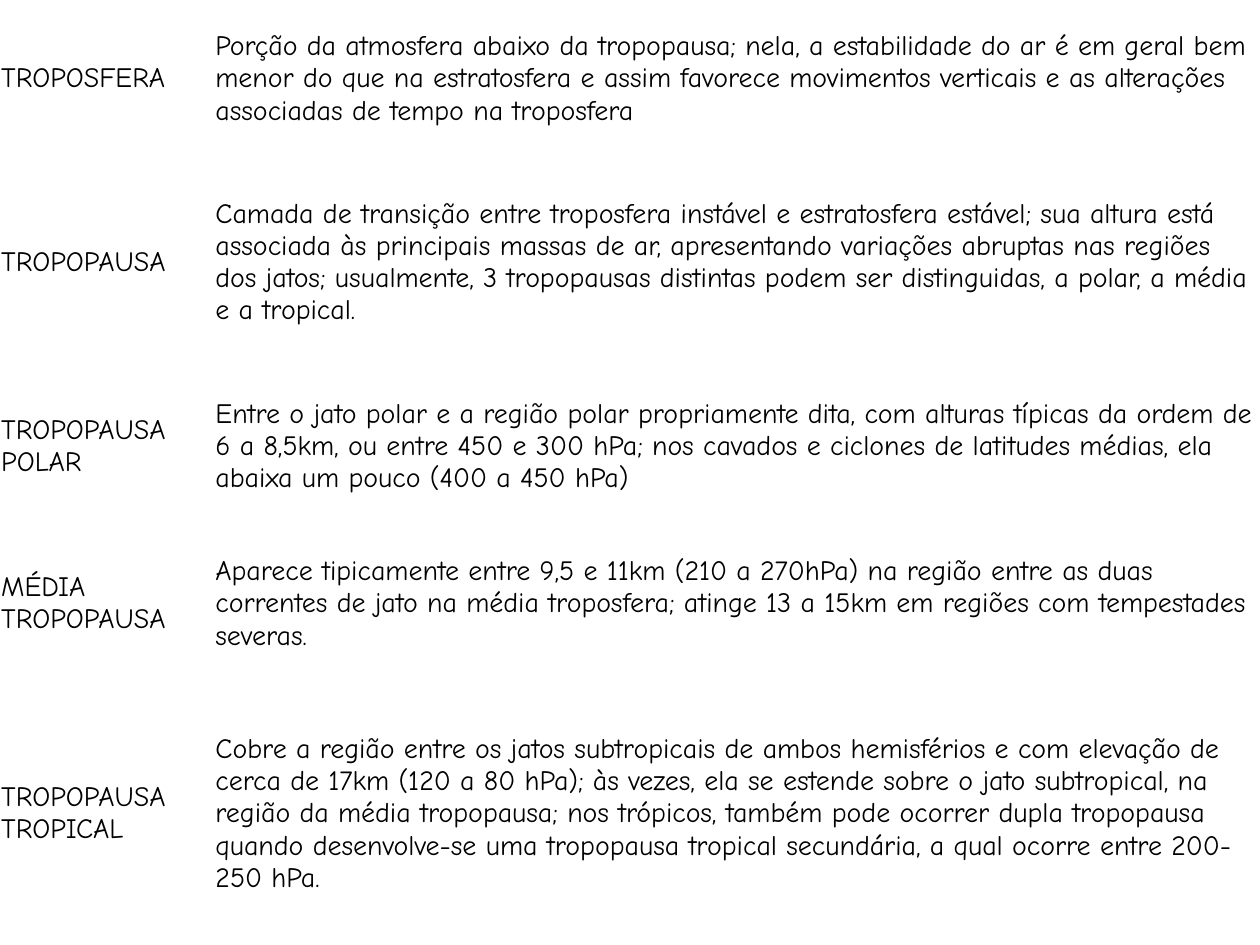
from dataclasses import dataclass

from pptx import Presentation
from pptx.dml.color import RGBColor
from pptx.enum.text import MSO_ANCHOR as Anchor, PP_ALIGN as Align
from pptx.table import Table, _Cell as Cell
from pptx.util import Inches, Pt

BLACK = RGBColor(0x00, 0x00, 0x00)
FONT = "Comic Neue"
SIZE = Pt(16)
INSET = Inches(0.01)
WIDE, HIGH = Inches(10), Inches(7.5)
SHARES = (0.17, 0.83)


@dataclass(frozen=True)
class Entry:
    term: str
    text: str
    lines: int


ENTRIES = (
    Entry(
        "TROPOSFERA",
        "Porção da atmosfera abaixo da tropopausa; nela, a estabilidade do ar "
        "é em geral bem menor do que na estratosfera e assim favorece "
        "movimentos verticais e as alterações associadas de tempo na troposfera",
        3,
    ),
    Entry(
        "TROPOPAUSA",
        "Camada de transição entre troposfera instável e estratosfera estável; "
        "sua altura está associada às principais massas de ar, apresentando "
        "variações abruptas nas regiões dos jatos; usualmente, 3 tropopausas "
        "distintas podem ser distinguidas, a polar, a média e a tropical.",
        4,
    ),
    Entry(
        "TROPOPAUSA POLAR",
        "Entre o jato polar e a região polar propriamente dita, com alturas "
        "típicas da ordem de 6 a 8,5km, ou entre 450 e 300 hPa; nos cavados e "
        "ciclones de latitudes médias, ela abaixa um pouco (400 a 450 hPa)",
        3,
    ),
    Entry(
        "MÉDIA TROPOPAUSA",
        "Aparece tipicamente entre 9,5 e 11km (210 a 270hPa) na região entre "
        "as duas correntes de jato na média troposfera; atinge 13 a 15km em "
        "regiões com tempestades severas.",
        3,
    ),
    Entry(
        "TROPOPAUSA TROPICAL",
        "Cobre a região entre os jatos subtropicais de ambos hemisférios e com "
        "elevação de cerca de 17km (120 a 80 hPa); às vezes, ela se estende "
        "sobre o jato subtropical, na região da média tropopausa; nos trópicos, "
        "também pode ocorrer dupla tropopausa quando desenvolve-se uma "
        "tropopausa tropical secundária, a qual ocorre entre 200-250 hPa.",
        5,
    ),
)


def fill_cell(cell: Cell, text: str) -> None:
    cell.fill.background()
    cell.vertical_anchor = Anchor.MIDDLE
    cell.margin_left = cell.margin_right = INSET
    cell.margin_top = cell.margin_bottom = INSET
    cell.text_frame.text = text
    para = cell.text_frame.paragraphs[0]
    para.alignment = Align.LEFT
    for run in para.runs:
        run.font.name = FONT
        run.font.size = SIZE
        run.font.color.rgb = BLACK


def fill_table(table: Table) -> None:
    """Share the height among the rows by their number of text lines."""
    table.first_row = table.horz_banding = False
    for col, share in zip(table.columns, SHARES):
        col.width = int(WIDE * share)
    total = sum(entry.lines for entry in ENTRIES)
    for row, entry in zip(table.rows, ENTRIES):
        row.height = HIGH * entry.lines // total
        for cell, text in zip(row.cells, (entry.term, entry.text)):
            fill_cell(cell, text)


def main() -> None:
    deck = Presentation()
    deck.slide_width, deck.slide_height = WIDE, HIGH
    slide = deck.slides.add_slide(deck.slide_layouts[6])
    frame = slide.shapes.add_table(len(ENTRIES), len(SHARES), 0, 0, WIDE, HIGH)
    fill_table(frame.table)
    deck.save("out.pptx")


if __name__ == "__main__":
    main()
